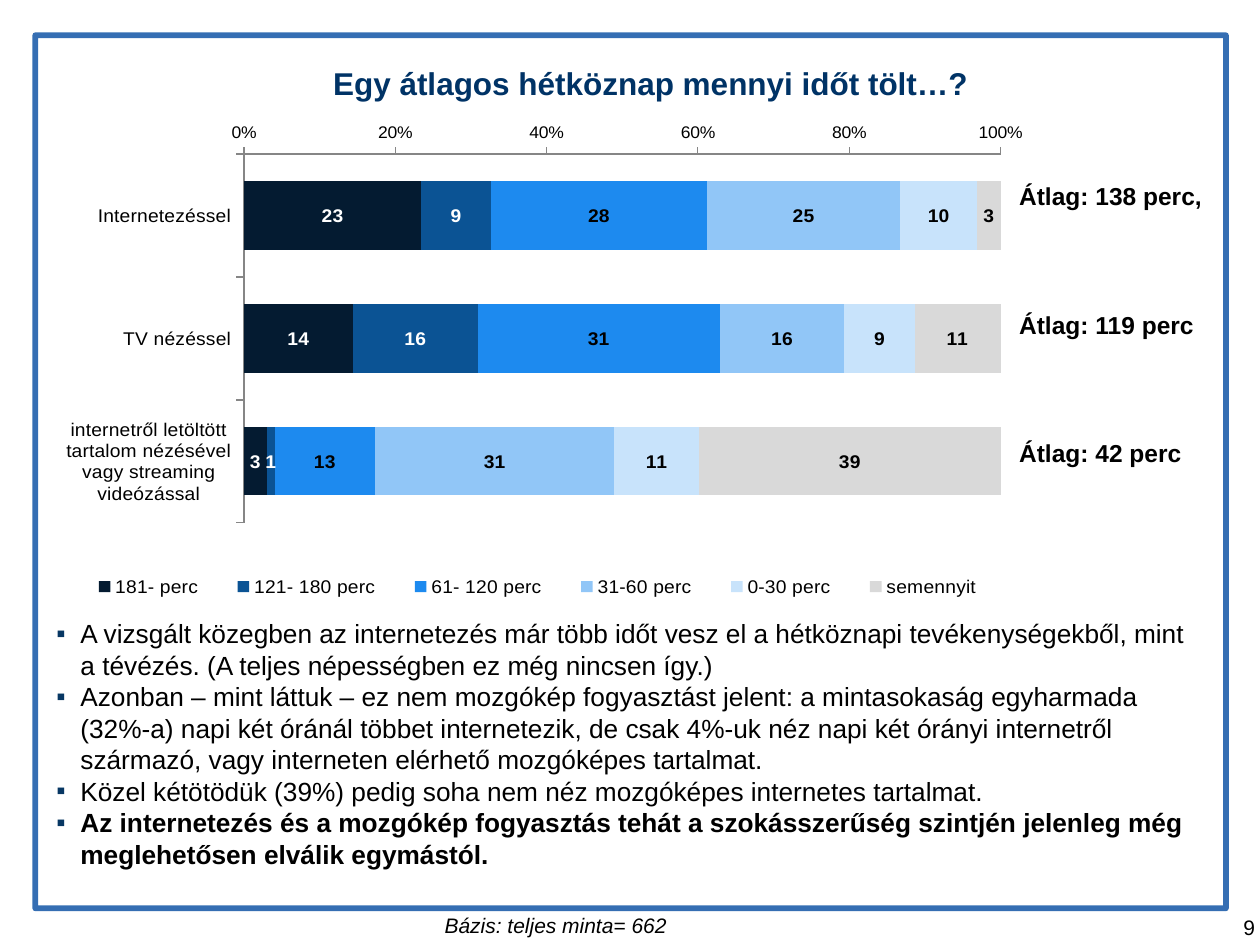
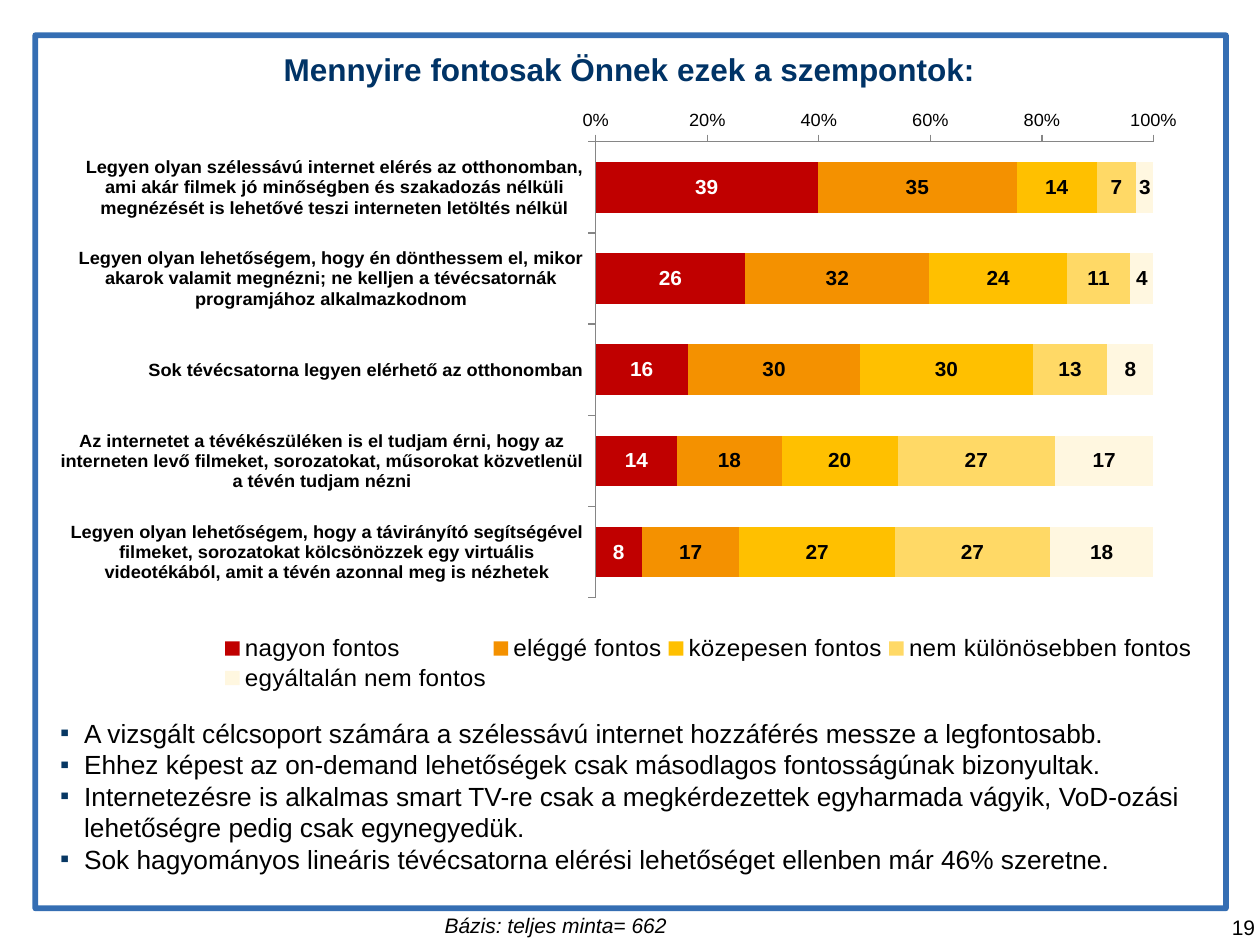
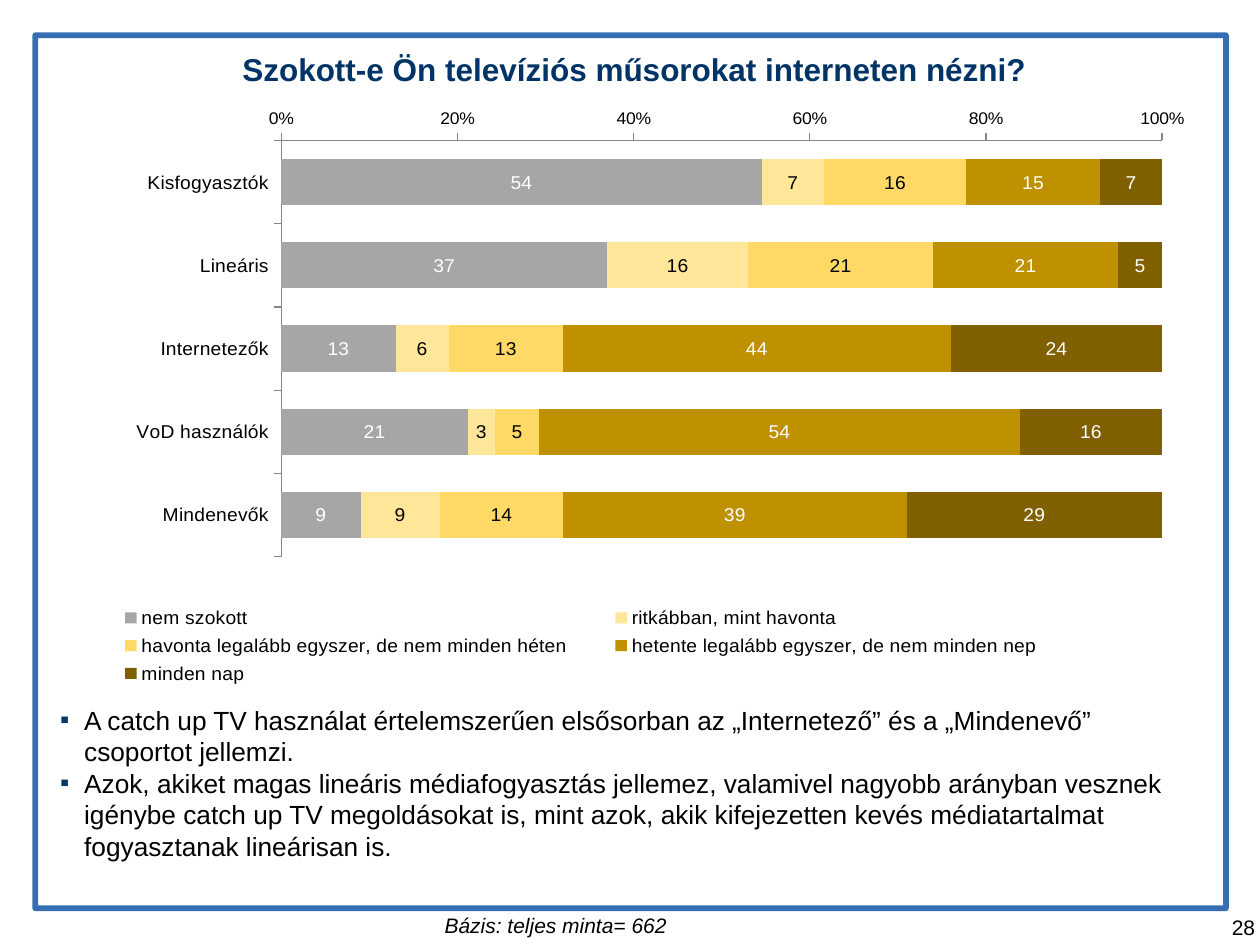
"""Build three survey slides, each with a stacked bar chart and bullet findings."""
from lxml import etree
from pptx import Presentation
from pptx.chart.data import CategoryChartData
from pptx.dml.color import RGBColor
from pptx.enum.chart import (XL_AXIS_CROSSES, XL_CHART_TYPE, XL_LABEL_POSITION,
                             XL_LEGEND_POSITION, XL_TICK_MARK)
from pptx.enum.shapes import MSO_SHAPE
from pptx.enum.text import MSO_ANCHOR, PP_ALIGN
from pptx.oxml.ns import qn
from pptx.util import Pt

PX = 9144
FONT = "Arial"
COLORS = {"frame": "094FA3", "title": "003366", "bullet": "073763",
          "text": "000000", "light": "FFFFFF", "axis": "868686"}

SLIDES = [
    {
        "number": "9",
        "title": "Egy átlagos hétköznap mennyi időt tölt…?",
        "title_box": (91, 36, 843, 59),
        "chart_box": (43, 98, 780, 411),
        "plot": (0.193, 0.017, 0.77, 0.744),
        "legend": (0.012, 0.86, 0.96, 0.06),
        "sizes": {"category": 11, "value": 10, "legend": 11, "label": 11},
        "bold_categories": False,
        "bold_labels": True,
        "categories": ["Internetezéssel", "TV nézéssel",
                       "internetről letöltött tartalom nézésével vagy streaming videózással"],
        "series": [
            ("181- perc", (23, 14, 3), "041B31", "light"),
            ("121- 180 perc", (9, 16, 1), "0B5394", "light"),
            ("61- 120 perc", (28, 31, 13), "1D8AEF", "text"),
            ("31-60 perc", (25, 16, 31), "91C6F7", "text"),
            ("0-30 perc", (10, 9, 11), "C8E3FB", "text"),
            ("semennyit", (3, 11, 39), "D9D9D9", "text"),
        ],
        "averages": ["Átlag: 138 perc,", "Átlag: 119 perc", "Átlag: 42 perc"],
        "findings_box": (35, 485, 927, 212),
        "findings": [
            "A vizsgált közegben az internetezés már több időt vesz el a hétköznapi "
            "tevékenységekből, mint a tévézés. (A teljes népességben ez még nincsen így.)",
            "Azonban – mint láttuk – ez nem mozgókép fogyasztást jelent: a mintasokaság "
            "egyharmada (32%-a) napi két óránál többet internetezik, de csak 4%-uk néz napi "
            "két órányi internetről származó, vagy interneten elérhető mozgóképes tartalmat.",
            "Közel kétötödük (39%) pedig soha nem néz mozgóképes internetes tartalmat.",
            "Az internetezés és a mozgókép fogyasztás tehát a szokásszerűség szintjén "
            "jelenleg még meglehetősen elválik egymástól.",
        ],
        "bold_finding": 3,
    },
    {
        "number": "19",
        "title": "Mennyire fontosak Önnek ezek a szempontok:",
        "title_box": (141, 25, 709, 59),
        "chart_box": (48, 87, 908, 493),
        "plot": (0.463, 0.017, 0.492, 0.761),
        "legend": (0.13, 0.836, 0.865, 0.103),
        "sizes": {"category": 10.5, "value": 10.5, "legend": 14, "label": 12},
        "bold_categories": True,
        "bold_labels": True,
        "categories": [
            "Legyen olyan szélessávú internet elérés az otthonomban, ami akár filmek jó "
            "minőségben és szakadozás nélküli megnézését is lehetővé teszi interneten "
            "letöltés nélkül",
            "Legyen olyan lehetőségem, hogy én dönthessem el, mikor akarok valamit megnézni; "
            "ne kelljen a tévécsatornák programjához alkalmazkodnom",
            "Sok tévécsatorna legyen elérhető az otthonomban",
            "Az internetet a tévékészüléken is el tudjam érni, hogy az interneten levő "
            "filmeket, sorozatokat, műsorokat közvetlenül a tévén tudjam nézni",
            "Legyen olyan lehetőségem, hogy a távirányító segítségével filmeket, sorozatokat "
            "kölcsönözzek egy virtuális videotékából, amit a tévén azonnal meg is nézhetek",
        ],
        "series": [
            ("nagyon fontos", (39, 26, 16, 14, 8), "C00000", "light"),
            ("eléggé fontos", (35, 32, 30, 18, 17), "F49100", "text"),
            ("közepesen fontos", (14, 24, 30, 20, 27), "FFC000", "text"),
            ("nem különösebben fontos", (7, 11, 13, 27, 27), "FFD966", "text"),
            ("egyáltalán nem fontos", (3, 4, 8, 17, 18), "FFF7E0", "text"),
        ],
        "averages": [],
        "findings_box": (38, 564, 927, 136),
        "findings": [
            "A vizsgált célcsoport számára a szélessávú internet hozzáférés messze a "
            "legfontosabb.",
            "Ehhez képest az on-demand lehetőségek csak másodlagos fontosságúnak bizonyultak.",
            "Internetezésre is alkalmas smart TV-re csak a megkérdezettek egyharmada vágyik, "
            "VoD-ozási lehetőségre pedig csak egynegyedük.",
            "Sok hagyományos lineáris tévécsatorna elérési lehetőséget ellenben már 46% "
            "szeretne.",
        ],
        "bold_finding": None,
    },
    {
        "number": "28",
        "title": "Szokott-e Ön televíziós műsorokat interneten nézni?",
        "title_box": (145, 25, 709, 59),
        "chart_box": (48, 87, 908, 461),
        "plot": (0.193, 0.017, 0.77, 0.744),
        "legend": (0.02, 0.84, 0.87, 0.16),
        "sizes": {"category": 11, "value": 10, "legend": 11, "label": 11},
        "bold_categories": False,
        "bold_labels": False,
        "categories": ["Kisfogyasztók", "Lineáris", "Internetezők", "VoD használók",
                       "Mindenevők"],
        "series": [
            ("nem szokott", (54, 37, 13, 21, 9), "A6A6A6", "light"),
            ("ritkábban, mint havonta", (7, 16, 6, 3, 9), "FFE699", "text"),
            ("havonta legalább egyszer, de nem minden héten", (16, 21, 13, 5, 14),
             "FFD966", "text"),
            ("hetente legalább egyszer, de nem minden nep", (15, 21, 44, 54, 39),
             "BF9000", "light"),
            ("minden nap", (7, 5, 24, 16, 29), "806000", "light"),
        ],
        "averages": [],
        "findings_box": (38, 554, 927, 136),
        "findings": [
            "A catch up TV használat értelemszerűen elsősorban az „Internetező” és a "
            "„Mindenevő” csoportot jellemzi.",
            "Azok, akiket magas lineáris médiafogyasztás jellemez, valamivel nagyobb arányban "
            "vesznek igénybe catch up TV megoldásokat is, mint azok, akik kifejezetten kevés "
            "médiatartalmat fogyasztanak lineárisan is.",
        ],
        "bold_finding": None,
    },
]


def add_text(s, box, lines, size, color="text", wrap=True, bullet=False):
    tf = s.shapes.add_textbox(*(v * PX for v in box)).text_frame
    tf.word_wrap = wrap
    for i, line in enumerate(lines):
        p = tf.paragraphs[0] if i == 0 else tf.add_paragraph()
        p.text = line
        if bullet:
            pPr = p._p.get_or_add_pPr()
            pPr.set("marL", str(19 * PX))
            pPr.set("indent", str(-19 * PX))
            clr = etree.SubElement(pPr, qn("a:buClr"))
            etree.SubElement(clr, qn("a:srgbClr"), val=COLORS["bullet"])
            etree.SubElement(pPr, qn("a:buFont"), typeface=FONT)
            etree.SubElement(pPr, qn("a:buChar"), char="▪")
        font = p.runs[0].font
        font.name, font.size = FONT, Pt(size)
        font.color.rgb = RGBColor.from_string(COLORS[color])
    return tf


def set_layout(parent, index, box, inner=False):
    for old in parent.findall(qn("c:layout")):
        parent.remove(old)
    layout = etree.Element(qn("c:layout"))
    manual = etree.SubElement(layout, qn("c:manualLayout"))
    if inner:
        etree.SubElement(manual, qn("c:layoutTarget"), val="inner")
    for tag in ("xMode", "yMode"):
        etree.SubElement(manual, qn(f"c:{tag}"), val="edge")
    for tag, v in zip("xywh", box):
        etree.SubElement(manual, qn(f"c:{tag}"), val=str(v))
    parent.insert(index, layout)


prs = Presentation()
prs.slide_width, prs.slide_height = 1000 * PX, 750 * PX

for d in SLIDES:
    s = prs.slides.add_slide(prs.slide_layouts[6])
    sizes = d["sizes"]

    sp = s.shapes.add_shape(MSO_SHAPE.RECTANGLE, 28 * PX, 28 * PX, 945 * PX, 693 * PX)
    sp.shadow.inherit = False
    sp.fill.background()
    sp.line.width = Pt(3.25)
    sp.line.color.rgb = RGBColor.from_string(COLORS["frame"])
    frame_color = sp._element.xpath(".//a:ln//a:srgbClr")[0]
    etree.SubElement(frame_color, qn("a:alpha"), val="81000")

    tf = add_text(s, (940, 721, 66, 27), [d["number"]], 12)
    tf.paragraphs[0].alignment = PP_ALIGN.RIGHT

    data = CategoryChartData(number_format="General")
    data.categories = d["categories"]
    for name, values, _, _ in d["series"]:
        data.add_series(name, values)
    chart = s.shapes.add_chart(XL_CHART_TYPE.BAR_STACKED_100,
                               *(v * PX for v in d["chart_box"]), data).chart
    chart.has_title = False
    chart.font.name, chart.font.size = FONT, Pt(18)
    chart.font.color.rgb = RGBColor.from_string(COLORS["text"])

    cat, val = chart.category_axis, chart.value_axis
    cat.reverse_order = True
    cat.crosses = XL_AXIS_CROSSES.MAXIMUM
    cat.tick_labels.font.bold = d["bold_categories"]
    val.minimum_scale, val.maximum_scale, val.major_unit = 0, 1, 0.2
    val.tick_labels.number_format = "0%"
    val.tick_labels.number_format_is_linked = False
    for axis, key in ((cat, "category"), (val, "value")):
        axis.has_major_gridlines = False
        axis.major_tick_mark = XL_TICK_MARK.OUTSIDE
        axis.minor_tick_mark = XL_TICK_MARK.NONE
        axis.tick_labels.font.size = Pt(sizes[key])
        axis.format.line.color.rgb = RGBColor.from_string(COLORS["axis"])

    plot = chart.plots[0]
    plot.gap_width, plot.overlap, plot.vary_by_categories = 80, 100, False
    for series, (_, _, fill, label_color) in zip(plot.series, d["series"]):
        series.format.fill.solid()
        series.format.fill.fore_color.rgb = RGBColor.from_string(fill)
        labels = series.data_labels
        labels.show_value = True
        labels.position = XL_LABEL_POSITION.CENTER
        labels.font.size, labels.font.bold = Pt(sizes["label"]), d["bold_labels"]
        labels.font.color.rgb = RGBColor.from_string(COLORS[label_color])

    chart.has_legend = True
    chart.legend.position = XL_LEGEND_POSITION.BOTTOM
    chart.legend.include_in_layout = False
    chart.legend.font.size = Pt(sizes["legend"])
    set_layout(chart._chartSpace.chart.plotArea, 0, d["plot"], inner=True)
    set_layout(chart.legend._element, 1, d["legend"])

    tf = add_text(s, d["findings_box"], d["findings"], 15, bullet=True)
    if d["bold_finding"] is not None:
        tf.paragraphs[d["bold_finding"]].runs[0].font.bold = True

    for i, average in enumerate(d["averages"]):
        tf = add_text(s, (799, 139 + 102 * i, 166, 34), [average], 14, wrap=False)
        tf.paragraphs[0].runs[0].font.bold = True

    tf = add_text(s, d["title_box"], [d["title"]], 18, "title")
    tf.vertical_anchor = MSO_ANCHOR.MIDDLE
    tf.margin_left = 8 * PX
    tf.margin_top = tf.margin_right = tf.margin_bottom = 0
    tf.paragraphs[0].alignment = PP_ALIGN.CENTER
    tf.paragraphs[0].runs[0].font.bold = True

    tf = add_text(s, (343, 719, 198, 30), ["Bázis: teljes minta= 662"], 12, wrap=False)
    tf.paragraphs[0].runs[0].font.italic = True

prs.save("out.pptx")
